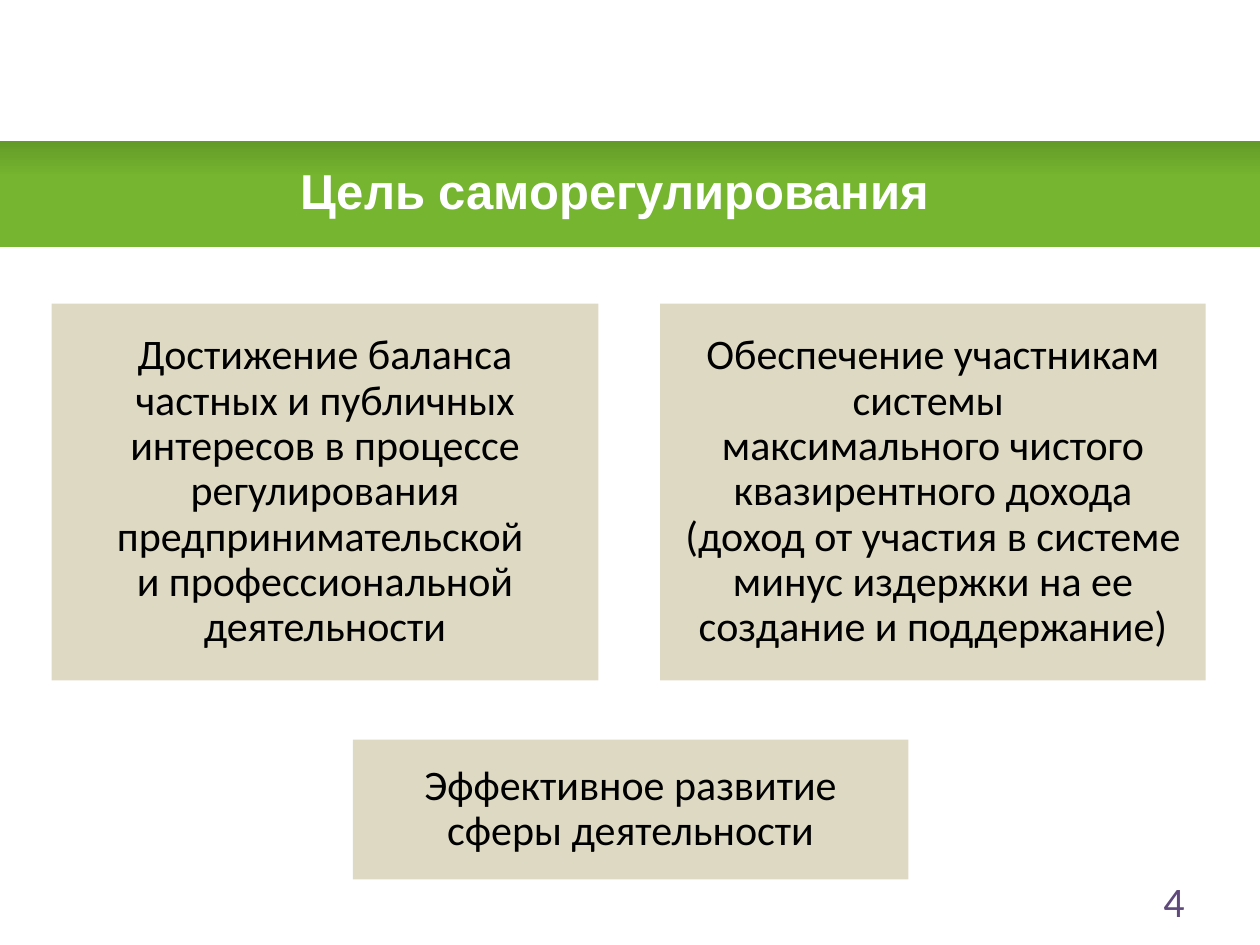
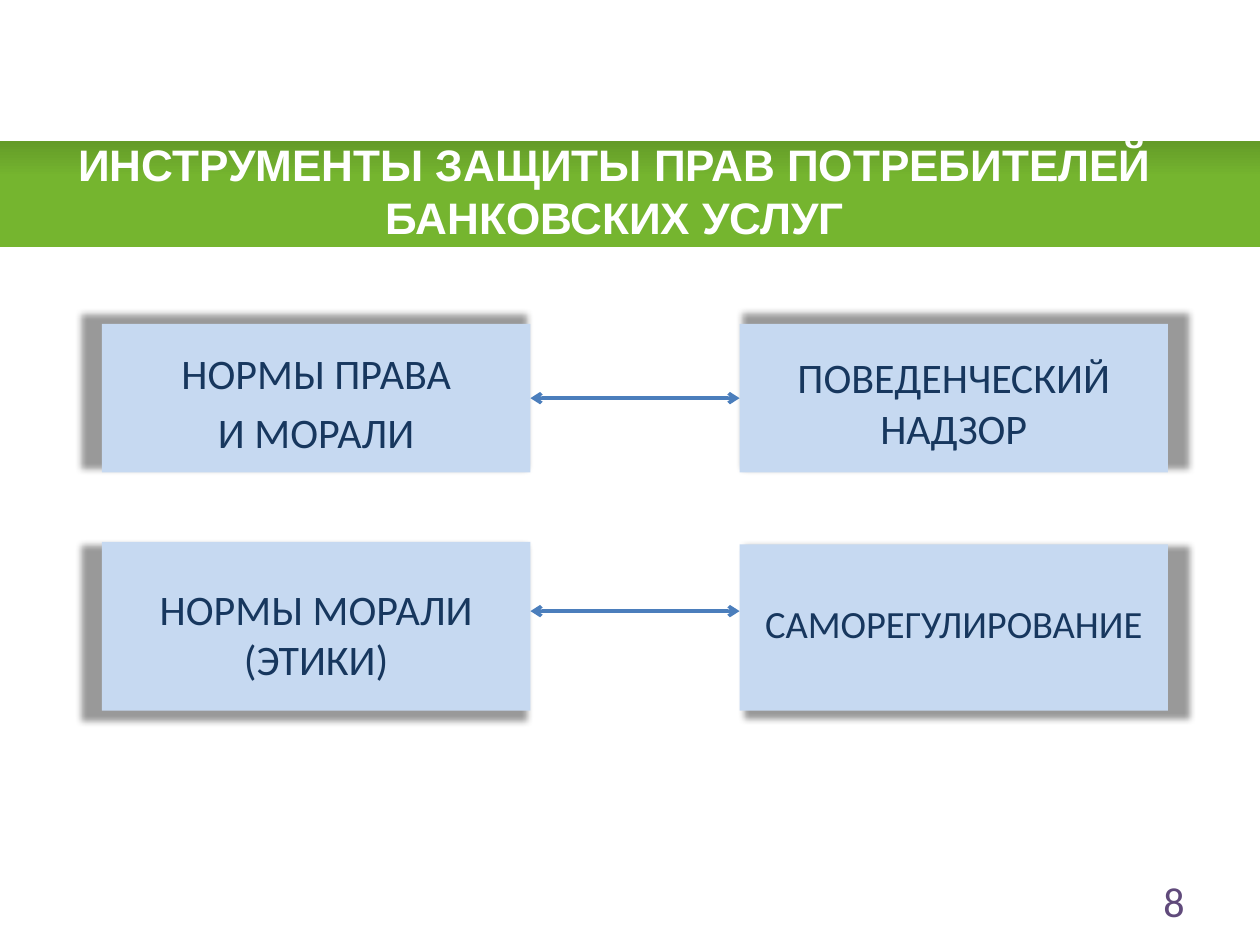
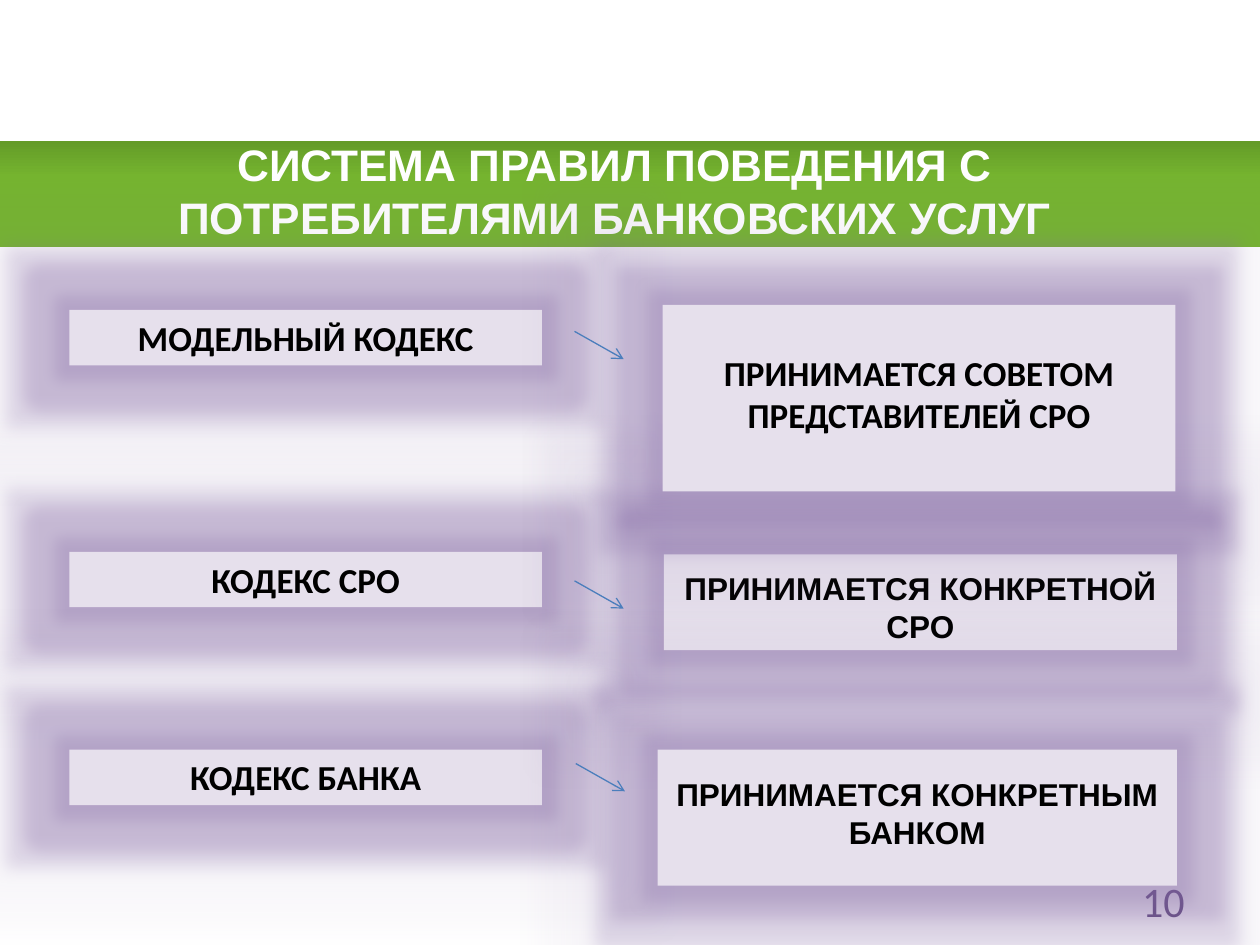
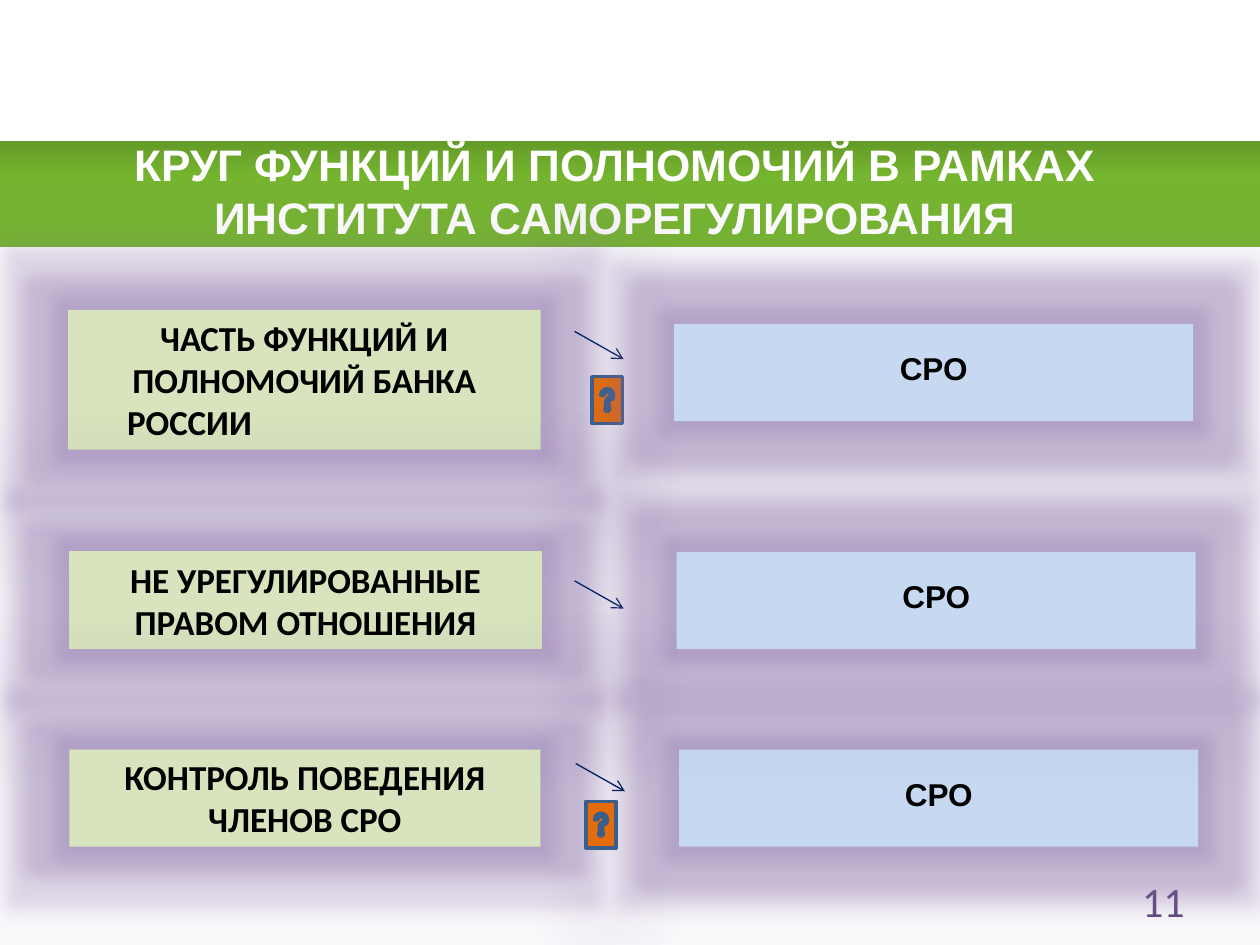
from lxml.etree import SubElement
from pptx import Presentation
from pptx.dml.color import RGBColor
from pptx.enum.shapes import MSO_CONNECTOR, MSO_SHAPE
from pptx.enum.text import MSO_ANCHOR, PP_ALIGN
from pptx.oxml.ns import qn
from pptx.util import Inches, Pt

COLORS = {
    "band_top": "649B28", "band": "75B52F", "title": "FFFFFF",
    "page": "604A7B", "text": "000000", "navy": "17375E",
    "sand": "DDD9C3", "sky": "C6D9F1", "lilac": "E6E0EC", "lime": "D7E4BD",
    "arrow": "4B7EBC", "dark_arrow": "002060", "halo": "8064A2",
    "help": "E46C0A", "help_edge": "3A5F8C", "shadow": "000000",
}
TITLE = {"name": "Arial", "bold": True, "color": "title"}
PAGE = {"name": "Calibri", "size": Pt(24), "color": "page"}
GOAL = {"name": "Calibri", "size": Pt(24), "color": "text"}
TOOL = {"name": "Calibri", "size": Pt(24), "color": "navy"}
RULE = {"name": "Calibri", "size": Pt(20), "bold": True, "color": "text"}
ADOPTED = {"name": "Arial", "size": Pt(18), "bold": True, "color": "text"}
# Shadow corner: direction in degrees and the corner it grows from
SHADOWS = {"up_left": (225, "br"), "up_right": (310, "bl"),
           "down_left": (135, "tr"), "down_right": (20, "tl")}


def rgb(key):
    return RGBColor.from_string(COLORS[key])


def set_format(target, values):
    for name, value in values.items():
        if name == "color":
            target.color.rgb = rgb(value)
        else:
            setattr(target, name, value)


def write(shape, paragraphs, font, align=PP_ALIGN.CENTER, frame=None, **spacing):
    """Fill the text frame; spacing applies to every paragraph."""
    text = shape.text_frame
    set_format(text, {"word_wrap": True, "vertical_anchor": MSO_ANCHOR.MIDDLE,
                      **(frame or {})})
    for index, words in enumerate(paragraphs):
        paragraph = text.add_paragraph() if index else text.paragraphs[0]
        paragraph.text = words
        layout = dict(spacing, alignment=align)
        if not index:
            layout.pop("space_before", None)
        set_format(paragraph, layout)
        set_format(paragraph.font, font)
    return text


def add_block(slide, box, fill, kind=MSO_SHAPE.RECTANGLE, edge=None, width=0.75):
    block = slide.shapes.add_shape(kind, *map(Inches, box))
    block.shadow.inherit = False
    block.fill.solid()
    block.fill.fore_color.rgb = rgb(fill)
    if edge:
        set_format(block.line, {"color": edge, "width": Pt(width)})
    else:
        block.line.fill.background()
    return block


def add_effect(block, tag, color, alpha, **attributes):
    effects = block._element.spPr.find(qn("a:effectLst"))
    effect = SubElement(effects, qn(tag), {k: str(v) for k, v in attributes.items()})
    tint = SubElement(effect, qn("a:srgbClr"), val=COLORS[color])
    SubElement(tint, qn("a:alpha"), val=str(alpha * 1000))


def add_halo(block, spread=Inches(0.5)):
    """An inner glow inside a wider, paler one."""
    add_effect(block, "a:glow", "halo", 25, rad=Inches(0.25))
    scale = [round(100000 * (side + 2 * spread) / side)
             for side in (block.width, block.height)]
    add_effect(block, "a:outerShdw", "halo", 25, blurRad=Inches(0.13),
               sx=scale[0], sy=scale[1], algn="ctr", rotWithShape=0)


def add_arrow(slide, start, end, color, weight, both=False):
    arrow = slide.shapes.add_connector(
        MSO_CONNECTOR.STRAIGHT, *map(Inches, (*start, *end)))
    set_format(arrow.line, {"color": color, "width": Pt(weight)})
    line = arrow.line._get_or_add_ln()
    for tip in ("a:headEnd", "a:tailEnd") if both else ("a:tailEnd",):
        SubElement(line, qn(tip), type="arrow")
    SubElement(arrow._element.spPr, qn("a:effectLst"))
    return arrow


def add_base(deck, title, number, size=25.2):
    """Slide with the green band, its title and the page number."""
    slide = deck.slides.add_slide(deck.slide_layouts[6])
    band = add_block(slide, (0, 1.12, 10, 0.84), "band")
    band.fill.gradient()
    band.fill.gradient_angle = 270
    for stop, (color, position) in zip(band.fill.gradient_stops,
                                       (("band_top", 0), ("band", 0.34))):
        stop.color.rgb = rgb(color)
        stop.position = position
    heading = slide.shapes.add_textbox(*map(Inches, (0.38, 1.16, 9, 0.7)))
    write(heading, [title], {**TITLE, "size": Pt(size)})
    page = slide.shapes.add_textbox(*map(Inches, (7.17, 6.95, 2.33, 0.4)))
    write(page, [str(number)], PAGE, PP_ALIGN.RIGHT)
    return slide


def add_goals(slide, goals):
    margins = dict.fromkeys(
        ("margin_left", "margin_right", "margin_top", "margin_bottom"), Inches(0.12))
    for box, paragraphs in goals:
        write(add_block(slide, box, "sand"), paragraphs, GOAL,
              frame=margins, line_spacing=0.9)


def add_tool(slide, box, paragraphs, corner, frame, size=24):
    tool = add_block(slide, box, "sky")
    direction, anchor = SHADOWS[corner]
    add_effect(tool, "a:outerShdw", "shadow", 40, blurRad=Pt(4), dist=Pt(3),
               dir=direction * 60000, sx=104000, sy=104000, algn=anchor,
               rotWithShape=0)
    write(tool, paragraphs, {**TOOL, "size": Pt(size)}, frame=frame,
          space_before=Pt(4.8))
    return tool


def add_tools(slide, left=0.81, right=5.87, width=3.4):
    def lowered(inset):
        return {"vertical_anchor": MSO_ANCHOR.TOP, "margin_top": Inches(inset)}

    centred = {"margin_top": Inches(0.11)}
    supervision = add_tool(slide, (right, 2.57, width, 1.18),
                           ["ПОВЕДЕНЧЕСКИЙ НАДЗОР"], "up_right", centred)
    law = add_tool(slide, (left, 2.57, width, 1.18),
                   ["НОРМЫ ПРАВА", "И МОРАЛИ"], "up_left", centred)
    add_tool(slide, (left, 4.3, width, 1.34),
             ["НОРМЫ МОРАЛИ (ЭТИКИ)"], "down_left", lowered(0.33))
    add_tool(slide, (right, 4.32, width, 1.32),
             ["САМОРЕГУЛИРОВАНИЕ"], "down_right", lowered(0.44), 22)
    # Two-way links between the columns
    upper, _ = [add_arrow(slide, (left + width, y), (right, y), "arrow", 2, True)
                for y in (3.16, 4.85)]
    upper.begin_connect(law, 3)
    upper.end_connect(supervision, 1)


def add_haloed(slide, box, paragraphs, fill, font, inset=0.05, edge=None):
    block = add_block(slide, box, fill, edge=edge)
    add_halo(block)
    return write(block, paragraphs, font,
                 frame={"vertical_anchor": MSO_ANCHOR.TOP,
                        "margin_top": Inches(inset)})


def add_row_arrows(slide, color):
    for x, y in ((4.56, 2.63), (4.56, 4.61), (4.57, 6.06)):
        add_arrow(slide, (x, y), (x + 0.39, y + 0.22), color, 0.75)


def add_codes(slide):
    codes = ((2.46, "МОДЕЛЬНЫЙ КОДЕКС"), (4.38, "КОДЕКС СРО"), (5.95, "КОДЕКС БАНКА"))
    for top, code in codes:
        add_haloed(slide, (0.55, top, 3.75, 0.44), [code], "lilac", RULE)
    adopters = (
        ((5.27, 4.4, 4.07, 0.76), "ПРИНИМАЕТСЯ КОНКРЕТНОЙ СРО", ADOPTED, 0.12),
        ((5.22, 5.95, 4.12, 1.08), "ПРИНИМАЕТСЯ КОНКРЕТНЫМ БАНКОМ", ADOPTED, 0.2),
        ((5.26, 2.42, 4.07, 1.48), "ПРИНИМАЕТСЯ СОВЕТОМ ПРЕДСТАВИТЕЛЕЙ СРО", RULE, 0.37),
    )
    for box, adopter, font, inset in adopters:
        add_haloed(slide, box, [adopter], "lilac", font, inset)
    add_row_arrows(slide, "arrow")


def add_powers(slide):
    def add_sro(left, top):
        add_haloed(slide, (left, top, 4.12, 0.77), ["СРО"], "sky", ADOPTED, 0.2)

    # Powers on the left
    central = add_haloed(slide, (0.54, 2.46, 3.75, 1.11),
                         ["ЧАСТЬ ФУНКЦИЙ И ПОЛНОМОЧИЙ БАНКА", "РОССИИ"], "lime", RULE)
    last_line = central.paragraphs[1]
    last_line.alignment = PP_ALIGN.LEFT
    last_line._p.get_or_add_pPr().set("marL", str(Inches(0.37)))
    add_haloed(slide, (0.55, 4.38, 3.75, 0.77),
               ["НЕ УРЕГУЛИРОВАННЫЕ ПРАВОМ ОТНОШЕНИЯ"], "lime", RULE, edge="lime")
    add_haloed(slide, (0.55, 5.95, 3.74, 0.77),
               ["КОНТРОЛЬ ПОВЕДЕНИЯ ЧЛЕНОВ СРО"], "lime", RULE)
    # Their holders on the right, with open questions between
    add_sro(5.39, 5.95)
    add_row_arrows(slide, "dark_arrow")
    for left, top in ((4.7, 2.99), (4.65, 6.36)):
        add_block(slide, (left, top, 0.24, 0.37), "help",
                  MSO_SHAPE.ACTION_BUTTON_HELP, "help_edge", 2)
    add_sro(5.37, 4.38)
    add_sro(5.35, 2.57)


def main():
    deck = Presentation()
    deck.slide_width, deck.slide_height = Inches(10), Inches(7.5)

    add_goals(add_base(deck, "Цель саморегулирования", 4, 28), (
        ((0.41, 2.41, 4.34, 2.99),
         ["Достижение баланса частных и публичных интересов в процессе "
          "регулирования предпринимательской ",
          "и профессиональной деятельности"]),
        ((5.24, 2.41, 4.33, 2.99),
         ["Обеспечение участникам системы ",
          "максимального чистого квазирентного дохода (доход от участия "
          "в системе минус издержки на ее создание и поддержание)"]),
        ((2.8, 5.87, 4.41, 1.11), ["Эффективное развитие сферы деятельности"]),
    ))
    add_tools(add_base(
        deck, "ИНСТРУМЕНТЫ ЗАЩИТЫ ПРАВ ПОТРЕБИТЕЛЕЙ БАНКОВСКИХ УСЛУГ", 8))
    add_codes(add_base(
        deck, "СИСТЕМА ПРАВИЛ ПОВЕДЕНИЯ С ПОТРЕБИТЕЛЯМИ БАНКОВСКИХ УСЛУГ", 10))
    add_powers(add_base(
        deck, "КРУГ ФУНКЦИЙ И ПОЛНОМОЧИЙ В РАМКАХ ИНСТИТУТА САМОРЕГУЛИРОВАНИЯ", 11))
    deck.save("out.pptx")


if __name__ == "__main__":
    main()
